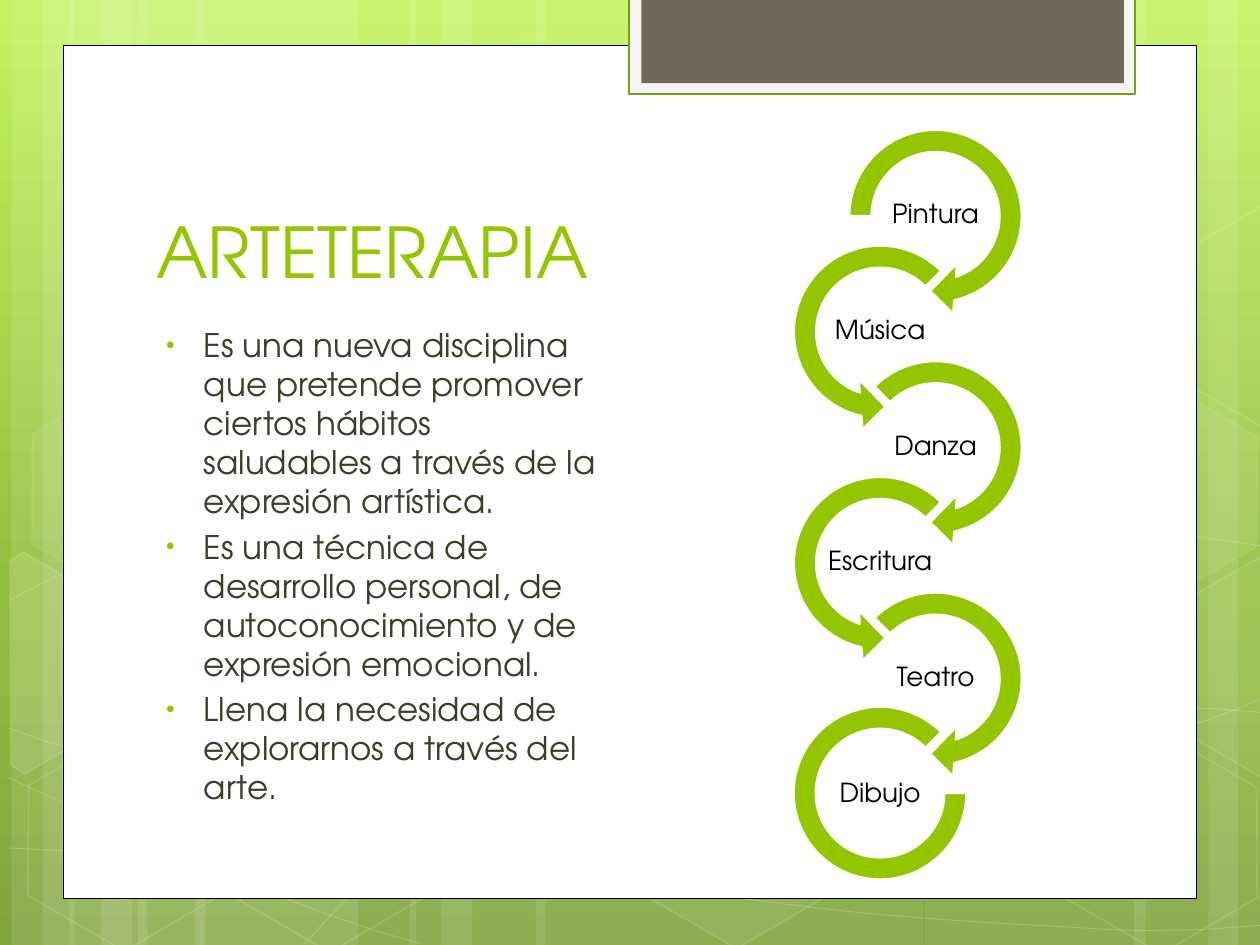
from copy import deepcopy
from math import cos, radians, sin

from lxml import etree
from pptx import Presentation
from pptx.dml.color import RGBColor
from pptx.enum.shapes import MSO_SHAPE
from pptx.enum.text import MSO_ANCHOR, PP_ALIGN
from pptx.oxml.ns import qn
from pptx.util import Inches, Pt

RECT, HEXAGON = MSO_SHAPE.RECTANGLE, MSO_SHAPE.HEXAGON
RIGHT, LEFT = MSO_SHAPE.CIRCULAR_ARROW, MSO_SHAPE.LEFT_CIRCULAR_ARROW
ARC = MSO_SHAPE.BLOCK_ARC
TOP, MIDDLE, BOTTOM = MSO_ANCHOR.TOP, MSO_ANCHOR.MIDDLE, MSO_ANCHOR.BOTTOM
START, CENTER = PP_ALIGN.LEFT, PP_ALIGN.CENTER
FONT = "TeX Gyre Adventor"
GREEN, WHITE, BLACK, DARK = "94C600", "FFFFFF", "000000", "3E3D2D"
TILT = 30

# Left edge and width of the pale vertical bars
BARS = [(1.09, 1.75), (0.09, 0.5), (0.34, 0.83), (1.55, 1.75), (0.55, 0.5),
        (0.8, 0.83), (7.34, 1.75), (9.59, 0.5), (9, 0.83), (4.25, 3.08),
        (3.25, 0.5), (3.5, 0.83)]

# Start point, then control, control, end for each curve segment
CURVES = [
    [(0.07, 6.73), (0.61, 6.76), (1.15, 6.79), (1.9, 6.78), (2.65, 6.77),
     (3.58, 6.75), (4.58, 6.65), (5.58, 6.55), (7, 6.36), (7.92, 6.17),
     (8.83, 5.98), (9.77, 5.68), (10.07, 5.51)],
    [(0.07, 4.77), (0.36, 4.61), (0.65, 4.46), (1.21, 4.31), (1.78, 4.16),
     (2.59, 3.94), (3.47, 3.87), (4.36, 3.8), (5.44, 3.79), (6.54, 3.87),
     (7.64, 3.95), (9.47, 4.26), (10.07, 4.34)],
    [(0.06, 6.17), (1.27, 6.72), (2.47, 7.27), (3.35, 7.49)],
    [(0.07, 5.78), (0.38, 5.89), (0.7, 6), (1.28, 6.16), (1.86, 6.31),
     (2.73, 6.56), (3.57, 6.73), (4.4, 6.9), (5.45, 7.08), (6.28, 7.18),
     (7.11, 7.29), (8, 7.33), (8.53, 7.36), (9.06, 7.4), (9.19, 7.38),
     (9.45, 7.38), (9.71, 7.37), (9.89, 7.35), (10.07, 7.34)],
    [(2.42, 7.49), (2.6, 7.29), (2.78, 7.09), (3.02, 6.91), (3.26, 6.72),
     (3.6, 6.53), (3.88, 6.39), (4.16, 6.25), (4.33, 6.19), (4.69, 6.09),
     (5.06, 5.99), (5.73, 5.85), (6.08, 5.78), (6.44, 5.71), (6.49, 5.71),
     (6.8, 5.69), (7.11, 5.66), (7.6, 5.63), (7.94, 5.62), (8.29, 5.61),
     (8.86, 5.62), (8.86, 5.62), (9.08, 5.62), (9.31, 5.62), (9.53, 5.62),
     (9.71, 5.63), (9.88, 5.64), (10.06, 5.66)],
]

# Left, top, fill opacity, line opacity
HEXES = [(3.34, 0.36, 4, 8), (4.97, 5.89, 6, 12), (0.11, 5.91, None, 12),
         (0.14, 3.12, 7, 8), (1.74, 5.92, None, 12), (7.53, 4.53, 10, 12),
         (8.34, 5.93, None, 12), (8.34, 3.14, 7, 8)]

# Hexagons cut by the slide edge: points, centre and fill opacity
CUTS = [
    ([(0.08, 4.45), (0.19, 4.38), (0.96, 4.83), (0.95, 5.7), (0.2, 6.14),
      (0.09, 6.07)], (0.36, 5.36), 10),
    ([(9.26, 4.85), (10.02, 4.41), (10.09, 4.46), (10.09, 6.13),
      (10.02, 6.17), (9.26, 5.73)], (9.85, 5.2), 4),
    ([(9.26, 2.07), (10.02, 1.63), (10.1, 1.68), (10.09, 3.35),
      (10.02, 3.39), (9.26, 2.95)], (9.85, 2.41), None),
]

POINTS = [
    "Es una nueva disciplina que pretende promover ciertos hábitos "
    "saludables a través de la expresión artística.",
    "Es una técnica de desarrollo personal, de autoconocimiento y de "
    "expresión emocional.",
    "Llena la necesidad de explorarnos a través del arte.",
]
ARTS = ["Pintura", "Música", "Danza", "Escritura", "Teatro", "Dibujo"]


def rgb(code):
    return RGBColor.from_string(code)


def paint(shape, fill=None, alpha=100, line=None, width=1, fade=100):
    """Set fill and line, each with an opacity in percent."""
    shape.shadow.inherit = False
    for part, code in ((shape.fill, fill), (shape.line.fill, line)):
        if code:
            part.solid()
            part.fore_color.rgb = rgb(code)
        else:
            part.background()
    if line:
        shape.line.width = Pt(width)
    for where, level in (("./", alpha), ("./a:ln/", fade)):
        for clr in shape.element.spPr.xpath(where + "a:solidFill/a:srgbClr"):
            if level < 100:
                etree.SubElement(clr, qn("a:alpha"), val=str(level * 1000))
    return shape


def add(slide, kind, x, y, w, h, adj=(), **look):
    shape = slide.shapes.add_shape(kind, Inches(x), Inches(y), Inches(w), Inches(h))
    for i, value in enumerate(adj):
        shape.adjustments[i] = value
    return paint(shape, **look)


def trace(slide, dots, close=False, **look):
    dots = [(Inches(x), Inches(y)) for x, y in dots]
    pen = slide.shapes.build_freeform(*dots[0], scale=1.0)
    pen.add_line_segments(dots[1:], close=close)
    return paint(pen.convert_to_shape(), **look)


def bend(shape):
    """Turn each three line points into one cubic curve."""
    lines = shape.element.xpath(".//a:lnTo")
    for i in range(0, len(lines), 3):
        curve = etree.Element(qn("a:cubicBezTo"))
        lines[i].addprevious(curve)
        for line in lines[i:i + 3]:
            curve.append(line[0])
            line.getparent().remove(line)


def unturn(dots, mid):
    """Turn points back about a centre by the hexagon tilt."""
    c, s = cos(radians(TILT)), sin(radians(TILT))
    gaps = [(x - mid[0], y - mid[1]) for x, y in dots]
    return [(mid[0] + c * x + s * y, mid[1] - s * x + c * y) for x, y in gaps]


def write(slide, text, x, y, w, h, size=15, color=BLACK, anchor=TOP, align=START,
          inset=None, spacing=None, before=0, bullet=None):
    frame = slide.shapes.add_textbox(Inches(x), Inches(y), Inches(w), Inches(h)).text_frame
    frame.word_wrap = True
    frame.vertical_anchor = anchor
    if inset is not None:
        frame.margin_left = frame.margin_right = Inches(inset)
        frame.margin_top = frame.margin_bottom = Inches(inset)
    frame.text = text
    for para in frame.paragraphs:
        para.alignment, para.space_before = align, Pt(before)
        if spacing:
            para.line_spacing = spacing
        font = para.runs[0].font
        font.name, font.size, font.color.rgb = FONT, Pt(size), rgb(color)
        if bullet:
            props = para._p.get_or_add_pPr()
            props.set("marL", str(Inches(0.38)))
            props.set("indent", str(Inches(-0.3)))
            tone = etree.SubElement(props, qn("a:buClr"))
            etree.SubElement(tone, qn("a:srgbClr"), val=GREEN)
            etree.SubElement(props, qn("a:buSzPct"), val="76000")
            etree.SubElement(props, qn("a:buFont"), typeface="Arial")
            etree.SubElement(props, qn("a:buChar"), char=bullet)


def backdrop(slide):
    # Three-stop gradient, top to bottom
    fill = slide.background.fill
    fill.gradient()
    fill.gradient_angle = 270
    first = slide.element.xpath(".//a:gsLst/a:gs")[0]
    first.addnext(deepcopy(first))
    for stop, (at, code) in zip(fill.gradient_stops,
                                [(0, "C3F35F"), (0.62, "93BF3F"), (1, "81A53E")]):
        stop.position, stop.color.rgb = at, rgb(code)
    # Bars, curves and hexagons
    for x, w in BARS:
        add(slide, RECT, x, 0, w, 7.5, fill=WHITE, alpha=10)
    for dots in CURVES:
        bend(trace(slide, dots, line=WHITE, width=0.5, fade=20))
    for x, y, alpha, fade in HEXES:
        add(slide, HEXAGON, x, y, 1.75, 1.52, (0.285, 1.155), fill=alpha and WHITE,
            alpha=alpha or 100, line=WHITE, fade=fade).rotation = TILT
    for dots, mid, alpha in CUTS:
        trace(slide, unturn(dots, mid), close=True, fill=alpha and WHITE,
              alpha=alpha or 100, line=WHITE, fade=12).rotation = TILT


def card(slide, x, y, w, h):
    # White panel with a tab hanging from the top edge
    add(slide, RECT, x, y, w, h, fill=WHITE, line=BLACK, width=0.5)
    add(slide, RECT, x + 4.49, y - 0.38, 4.02, 0.77, fill="F5F5F5", line="74A510", width=1.25)
    add(slide, RECT, x + 4.59, y - 0.38, 3.83, 0.68, fill="71685A")


def column(slide, x, y, w, h):
    # Title and bullet list
    write(slide, "ARTETERAPIA", x, y, 7.68, 1.25, size=40, color=GREEN, anchor=BOTTOM)
    write(slide, "\n".join(POINTS), x, y + 1.41, w, h - 1.41, size=18.6, color=DARK,
          before=3.7, bullet="•")


def chain(slide, x, y, size=1.59, step=0.918, shift=0.44):
    # Arrows swing right and left; the last link is an open ring
    look = dict(fill=GREEN, line=WHITE, width=1.25)
    for i, art in enumerate(ARTS):
        left, top = x + (0 if i % 2 else shift), y + i * step
        if i == len(ARTS) - 1:
            add(slide, ARC, left + 0.11, top + 0.1, 1.37, 1.37, (0, 189, 0.127), **look)
        else:
            turn = (63, 189) if i % 2 else (45, 135 if i else 108)
            add(slide, LEFT if i % 2 else RIGHT, left, top, size, size,
                (0.11, 11.423, *turn, 0.125), **look)
        write(slide, art, left + 0.35, top + 0.57, 0.89, 0.44, anchor=MIDDLE,
              align=CENTER, inset=0.01, spacing=0.9)


def main():
    deck = Presentation()
    deck.slide_width, deck.slide_height = Inches(10), Inches(7.5)
    slide = deck.slides.add_slide(deck.slide_layouts[6])
    backdrop(slide)
    card(slide, 0.5, 0.36, 9, 6.77)
    column(slide, 1.14, 1.12, 3.74, 5.23)
    chain(slide, 6.19, 0.92)
    deck.save("out.pptx")


if __name__ == "__main__":
    main()
